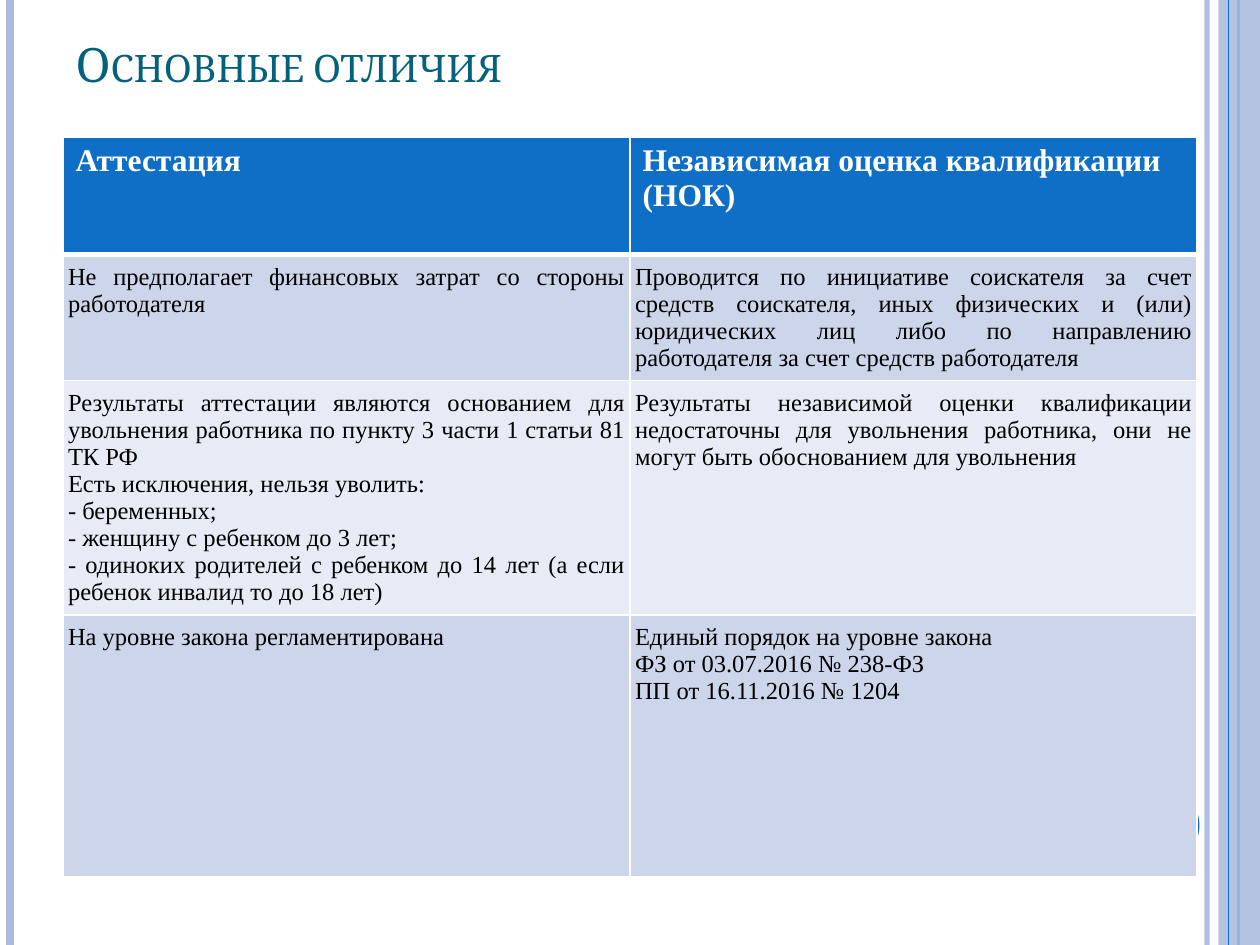
from dataclasses import dataclass
from typing import Any

from lxml import etree
from pptx import Presentation
from pptx.dml.color import RGBColor
from pptx.enum.shapes import MSO_CONNECTOR, MSO_SHAPE
from pptx.enum.text import MSO_ANCHOR, PP_ALIGN
from pptx.oxml.ns import qn
from pptx.util import Inches, Pt

STRAIGHT = MSO_CONNECTOR.STRAIGHT
RECT, OVAL = MSO_SHAPE.RECTANGLE, MSO_SHAPE.OVAL
BOTTOM = MSO_ANCHOR.BOTTOM
LEFT, JUSTIFY = PP_ALIGN.LEFT, PP_ALIGN.JUSTIFY

WHITE = RGBColor(0xFF, 0xFF, 0xFF)
BLACK = RGBColor(0, 0, 0)
BLUE = RGBColor(0x0F, 0x6F, 0xC6)
LAVENDER = RGBColor(0xAB, 0xBB, 0xDF)
TEAL = RGBColor(0x04, 0x61, 0x7B)
BANDS = [RGBColor(0xCC, 0xD5, 0xEA), RGBColor(0xE7, 0xEB, 0xF5)]

WIDTH, HEIGHT = Inches(10), Inches(7.5)
TITLE_FONT = {"name": "Cambria", "size": Pt(27), "bold": False}
HEAD_FONT = {"name": "Times New Roman", "size": Pt(18), "bold": True}
BODY_FONT = {"name": "Times New Roman", "size": Pt(14), "bold": False}
BODY_MARGINS = {
    "margin_left": Inches(0.04), "margin_right": Inches(0.04),
    "margin_top": Inches(0.07), "margin_bottom": Inches(0.07),
}
ROW_HEIGHTS = [0.93, 1, 1.86, 2.08]
ROWS = [
    ["Аттестация", "Независимая оценка квалификации (НОК)"],
    ["Не предполагает финансовых затрат со стороны работодателя",
     "Проводится по инициативе соискателя за счет средств соискателя, иных "
     "физических и (или) юридических лиц либо по направлению работодателя "
     "за счет средств работодателя"],
    ["Результаты аттестации являются основанием для увольнения работника "
     "по пункту 3 части 1 статьи 81 ТК РФ\n"
     "Есть исключения, нельзя уволить:\n"
     "- беременных;\n"
     "- женщину с ребенком до 3 лет;\n"
     "- одиноких родителей с ребенком до 14 лет (а если ребенок инвалид "
     "то до 18 лет)",
     "Результаты независимой оценки квалификации недостаточны для увольнения "
     "работника, они не могут быть обоснованием для увольнения"],
    ["На уровне закона регламентирована",
     "Единый порядок на уровне закона\n"
     "ФЗ от 03.07.2016 № 238-ФЗ\n"
     "ПП от 16.11.2016 № 1204"],
]


def set_all(obj, values):
    """Set every attribute in a dict of format values."""
    for name, value in values.items():
        setattr(obj, name, value)


def set_alpha(parent, percent):
    """Make the solid colour under an element partly transparent."""
    color = next(parent.iter(qn("a:srgbClr")))
    etree.SubElement(color, qn("a:alpha"), val=str(percent * 1000))


@dataclass
class Deck:
    """Hold the slide and place elements by shares of its size."""

    s: Any

    def box(self, x, y, w, h):
        """Turn shares of the slide into lengths."""
        return [int(v) for v in (x * WIDTH, y * HEIGHT, w * WIDTH, h * HEIGHT)]

    def rule(self, x, color, width, alpha=100):
        """Draw a full-height vertical line."""
        x = int(x * WIDTH)
        line = self.s.shapes.add_connector(STRAIGHT, x, 0, x, HEIGHT)
        line.line.color.rgb = color
        line.line.width = Pt(width)
        sp_pr = line._element.spPr
        etree.SubElement(sp_pr, qn("a:effectLst"))
        if alpha < 100:
            set_alpha(sp_pr, alpha)

    def shape(self, kind, box, color, alpha=100):
        """Draw a filled shape without an outline."""
        sp = self.s.shapes.add_shape(kind, *self.box(*box))
        sp.shadow.inherit = False
        sp.fill.solid()
        sp.fill.fore_color.rgb = color
        sp.line.fill.background()
        if alpha < 100:
            set_alpha(sp._element.spPr, alpha)

    def text(self, tf, text, font, color, align):
        """Write formatted paragraphs, one for each line."""
        tf.text = text
        for p in tf.paragraphs:
            p.alignment = align
            for r in p.runs:
                set_all(r.font, font)
                r.font.color.rgb = color

    def title(self, text, box):
        """Fill the title placeholder in small capitals."""
        sp = self.s.shapes.title
        set_all(sp, dict(zip(("left", "top", "width", "height"), self.box(*box))))
        tf = sp.text_frame
        tf.word_wrap = True
        tf.vertical_anchor = BOTTOM
        self.text(tf, text, TITLE_FONT, TEAL, LEFT)
        tf.paragraphs[0].runs[0].font._element.set("cap", "small")
        self.s.shapes._spTree.append(sp._element)

    def borders(self, cell, top, bottom):
        """Give a cell white borders."""
        tc_pr = cell._tc.get_or_add_tcPr()
        for side, width in zip("LRTB", (1, 1, top, bottom)):
            ln = etree.SubElement(tc_pr, qn(f"a:ln{side}"), w=str(Pt(width)))
            fill = etree.SubElement(ln, qn("a:solidFill"))
            etree.SubElement(fill, qn("a:srgbClr"), val=str(WHITE))

    def table(self, box):
        """Build the comparison table with a header and banded rows."""
        frame = self.s.shapes.add_table(len(ROWS), len(ROWS[0]), *self.box(*box))
        table = frame.table
        for i, (row, height) in enumerate(zip(ROWS, ROW_HEIGHTS)):
            table.rows[i].height = Inches(height)
            head = i == 0
            for j, text in enumerate(row):
                cell = table.cell(i, j)
                self.borders(cell, 3 if i == 1 else 1, 3 if head else 1)
                cell.fill.solid()
                cell.fill.fore_color.rgb = BLUE if head else BANDS[(i - 1) % 2]
                if head:
                    self.text(cell.text_frame, text, HEAD_FONT, WHITE, LEFT)
                else:
                    set_all(cell, BODY_MARGINS)
                    self.text(cell.text_frame, text, BODY_FONT, BLACK, JUSTIFY)


def main():
    """Build and save the slide."""
    prs = Presentation()
    prs.slide_width, prs.slide_height = WIDTH, HEIGHT
    deck = Deck(prs.slides.add_slide(prs.slide_layouts[5]))
    deck.rule(0.958, LAVENDER, 3, 93)
    deck.rule(0.008, LAVENDER, 4.5)
    deck.rule(0.983, BLUE, 1.5)
    deck.shape(RECT, (0.967, 0, 0.033, 1), LAVENDER, 87)
    deck.rule(0.975, BLUE, 0.75)
    deck.shape(OVAL, (0.892, 6.25 / 7.5, 0.06, 0.08), BLUE)
    deck.title("Основные отличия", (0.05, 0.04, 0.9, 0.064))
    deck.table((0.05, 1.09 / 7.5, 0.9, sum(ROW_HEIGHTS) / 7.5))
    prs.save("out.pptx")


if __name__ == "__main__":
    main()
